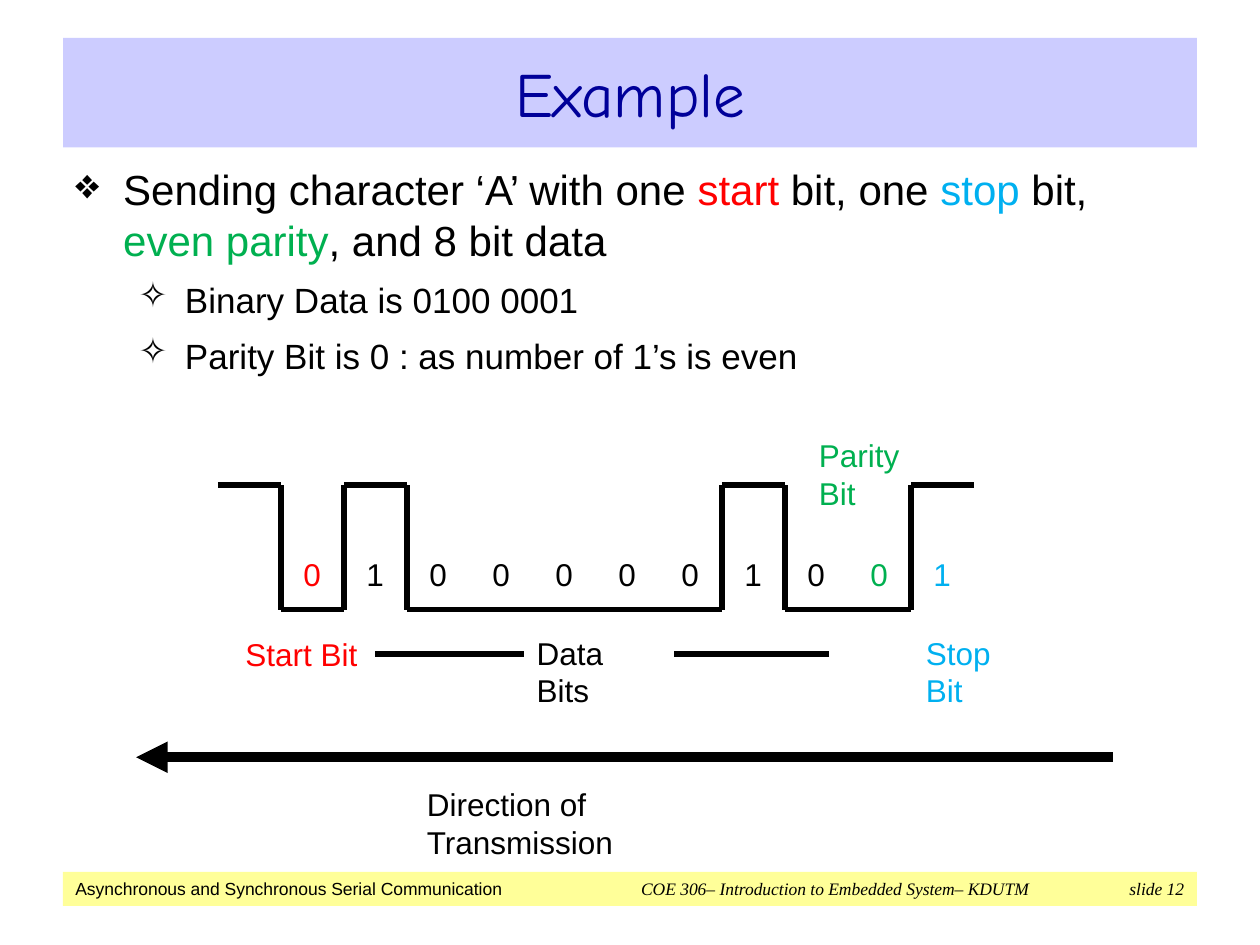
import pptx
import pptx.util
import pptx.dml.color
import pptx.enum.shapes
import pptx.enum.text
import pptx.oxml
import pptx.oxml.ns
import lxml.etree

Inches = pptx.util.Inches
Pt = pptx.util.Pt
ALIGN = pptx.enum.text.PP_ALIGN
ANCHOR = pptx.enum.text.MSO_ANCHOR

THEME = {
    "ink": "000000", "start": "FF0000", "stop": "00B0F0", "even": "00B050",
    "title": "000099", "band": "CCCCFF", "foot": "FFFF99",
    "font": "Arial", "head": "Comic Neue", "serif": "Times New Roman",
    "big": 36, "main": 24, "sub": 20, "label": 18, "small": 10,
}

TITLE = "Example"
FOOT = [
    ("Asynchronous and Synchronous Serial Communication", {}),
    ("\tCOE 306– Introduction to Embedded System– KDUTM\tslide 12",
     {"font": "serif", "italic": True}),
]
POINTS = [
    (0, [("Sending character ‘A’ with one ", "ink"), ("start ", "start"),
         ("bit, one ", "ink"), ("stop", "stop"), (" bit, ", "ink"),
         ("even parity", "even"), (", and 8 bit data", "ink")]),
    (1, [("Binary Data is 0100 0001", "ink")]),
    (1, [("Parity Bit is 0 : as number of 1’s is even", "ink")]),
]
LEVELS = [
    {"char": "❖", "left": 0.38, "hang": 0.38, "size": "main", "gap": 9.6},
    {"char": "✧", "left": 0.87, "hang": 0.37, "size": "sub", "gap": 8},
]
IDLE = 1
BITS = [(0, "start"), (1, "ink"), (0, "ink"), (0, "ink"), (0, "ink"),
        (0, "ink"), (0, "ink"), (1, "ink"), (0, "ink"), (0, "even"),
        (1, "stop")]
LABELS = [
    ("Start Bit", "start", 1.85, 4.99, 1.1),
    ("Stop Bit", "stop", 7.25, 4.98, 1.05),
    ("Parity Bit", "even", 6.4, 3.41, 1.19),
    ("Data Bits", "ink", 4.16, 4.98, 1.19),
    ("Direction of Transmission", "ink", 3.29, 6.18, 2.93),
]
RULES = [(2.98, 4.16), (6.58, 5.35)]
LEFT, STEP = 1.73, 0.5
LINE = {1: 3.85, 0: 4.84}


def hue(name):
    return pptx.dml.color.RGBColor.from_string(THEME[name])


def write(para, text, color="ink", size="label", font="font", italic=False):
    run = para.add_run()
    run.text = text
    run.font.name = THEME[font]
    run.font.size = Pt(THEME[size])
    run.font.italic = italic
    run.font.color.rgb = hue(color)


def node(parent, tag, **attrs):
    return lxml.etree.SubElement(parent, pptx.oxml.ns.qn(tag), attrs)


def frame(left, top, width, height):
    box = slide.shapes.add_textbox(
        Inches(left), Inches(top), Inches(width), Inches(height))
    box.text_frame.word_wrap = True
    return box.text_frame


def wire(x1, y1, x2, y2, width=3):
    line = slide.shapes.add_connector(
        pptx.enum.shapes.MSO_CONNECTOR.STRAIGHT,
        Inches(x1), Inches(y1), Inches(x2), Inches(y2))
    line.line.color.rgb = hue("ink")
    line.line.width = Pt(width)
    node(line._element.spPr, "a:effectLst")
    return line


def draw_foot():
    bar = slide.shapes.add_shape(
        pptx.enum.shapes.MSO_SHAPE.RECTANGLE,
        Inches(0.5), Inches(6.92), Inches(9), Inches(0.27))
    bar.shadow.inherit = False
    bar.fill.solid()
    bar.fill.fore_color.rgb = hue("foot")
    bar.line.fill.background()
    bar.text_frame.vertical_anchor = ANCHOR.MIDDLE
    para = bar.text_frame.paragraphs[0]
    para.alignment = ALIGN.LEFT
    tabs = node(para._p.get_or_add_pPr(), "a:tabLst")
    for stop, side in [(4.49, "l"), (8.8, "r")]:
        node(tabs, "a:tab", pos=str(Inches(stop)), algn=side)
    for text, style in FOOT:
        write(para, text, size="small", **style)


def draw_title():
    head = slide.shapes.title
    head.left, head.top = Inches(0.5), Inches(0.3)
    head.width, head.height = Inches(9), Inches(0.87)
    head.fill.solid()
    head.fill.fore_color.rgb = hue("band")
    head.text_frame.vertical_anchor = ANCHOR.MIDDLE
    para = head.text_frame.paragraphs[0]
    para.alignment = ALIGN.CENTER
    write(para, TITLE, "title", "big", "head")


def draw_points():
    body = frame(0.5, 1.25, 9, 5.62)
    for i, (depth, parts) in enumerate(POINTS):
        para = body.add_paragraph() if i else body.paragraphs[0]
        level = LEVELS[depth]
        para.level = depth
        para.space_before = Pt(level["gap"])
        props = para._p.get_or_add_pPr()
        props.set("marL", str(Inches(level["left"])))
        props.set("indent", str(-Inches(level["hang"])))
        node(props, "a:buChar", char=level["char"])
        for text, color in parts:
            write(para, text, color, level["size"])


def draw_wave():
    last = IDLE
    wire(LEFT, LINE[IDLE], LEFT + STEP, LINE[IDLE])
    for i, (bit, color) in enumerate(BITS, 1):
        x = LEFT + i * STEP
        if bit != last:
            wire(x, LINE[1], x, LINE[0])
        wire(x, LINE[bit], x + STEP, LINE[bit])
        cell = frame(x + 0.08, 4.36, 0.35, 0.4)
        cell.word_wrap = False
        write(cell.paragraphs[0], str(bit), color)
        last = bit


def draw_labels():
    for text, color, left, top, width in LABELS:
        write(frame(left, top, width, 0.4).paragraphs[0], text, color)
    for x1, x2 in RULES:
        wire(x1, 5.19, x2, 5.19)
    arrow = wire(8.83, 6.01, 1.08, 6.01, 6)
    node(arrow.line._get_or_add_ln(), "a:tailEnd", type="triangle")


deck = pptx.Presentation()
deck.slide_width, deck.slide_height = Inches(10), Inches(7.5)
slide = deck.slides.add_slide(deck.slide_layouts[5])
draw_foot()
draw_title()
draw_points()
draw_wave()
draw_labels()
deck.save("out.pptx")
